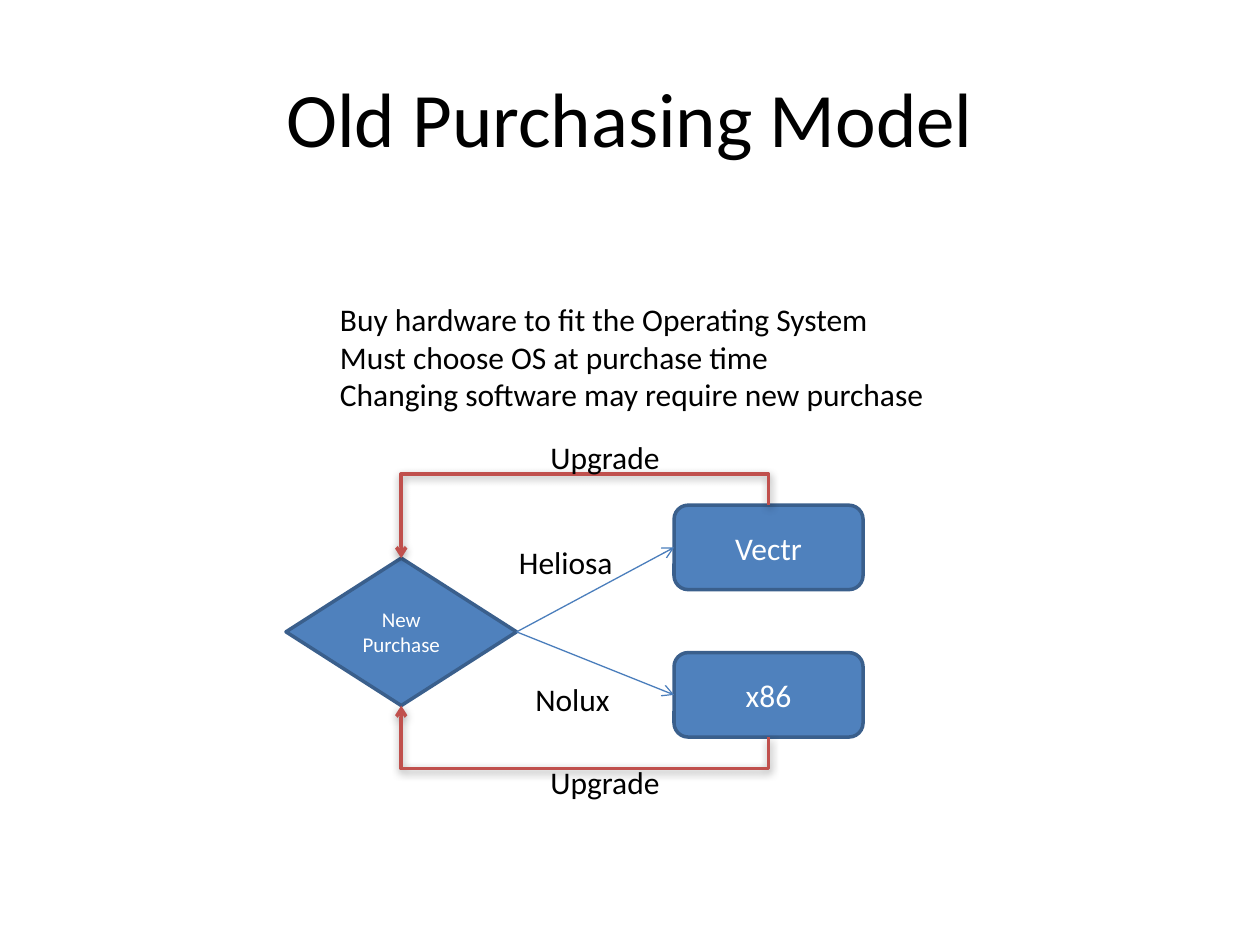
"""Builds the Old Purchasing Model slide with its decision and upgrade loops."""
from lxml import etree
from pptx import Presentation
from pptx.dml.color import RGBColor
from pptx.enum import shapes, text
from pptx.oxml.ns import qn
from pptx.util import Inches, Pt

COLORS = {"text": "000000", "light": "FFFFFF", "fill": "4F81BD",
          "border": "3A5F8C", "choice": "4B7EBC", "upgrade": "C0504D"}
FONT = "Calibri"
TITLE = ("Old Purchasing Model", 0.5, 0.3, 9, 1.25)
POINTS = ("Buy hardware to fit the Operating System\n"
          "Must choose OS at purchase time\n"
          "Changing software may require new purchase", 2.6, 2.33, 5.3, 1.3)
DECISION = ("New Purchase", 2.27, 4.43, 1.83, 1.17)
PLATFORMS = [("Vectr", 5.35, 4.01, 1.5, 0.67), ("x86", 5.35, 5.18, 1.5, 0.67)]
LABELS = [("Heliosa", 4.02, 4.26, 1.05, 0.4), ("Nolux", 4.15, 5.35, 0.9, 0.4),
          ("Upgrade", 4.27, 3.43, 1.16, 0.4), ("Upgrade", 4.27, 6.01, 1.16, 0.4)]
LOOP_GAP = 0.25
TOP, LEFT, BOTTOM, RIGHT = range(4)


def rgb(name):
    return RGBColor.from_string(COLORS[name])


def write(sp, words, size, color, align, anchor):
    tf = sp.text_frame
    tf.text = words
    tf.word_wrap = True
    tf.vertical_anchor = anchor
    for p in tf.paragraphs:
        p.alignment = align
        for r in p.runs:
            r.font.name, r.font.size = FONT, Pt(size)
            r.font.color.rgb = rgb(color)


def add_text(s, item, size=18, align=text.PP_ALIGN.LEFT, anchor=text.MSO_ANCHOR.TOP):
    words, *box = item
    sp = s.shapes.add_textbox(*map(Inches, box))
    write(sp, words, size, "text", align, anchor)
    return sp


def add_node(s, kind, item, size):
    words, *box = item
    sp = s.shapes.add_shape(kind, *map(Inches, box))
    sp.shadow.inherit = False
    sp.fill.solid()
    sp.fill.fore_color.rgb = rgb("fill")
    sp.line.color.rgb = rgb("border")
    sp.line.width = Pt(2)
    write(sp, words, size, "light", text.PP_ALIGN.CENTER, text.MSO_ANCHOR.MIDDLE)
    return sp


def add_arrow(s, kind, start, start_site, end, end_site, color, width):
    c = s.shapes.add_connector(kind, 0, 0, 0, 0)
    c.begin_connect(start, start_site)
    c.end_connect(end, end_site)
    c.line.color.rgb = rgb(color)
    c.line.width = Pt(width)
    etree.SubElement(c.line._get_or_add_ln(), qn("a:tailEnd"), type="arrow")
    effects = etree.SubElement(c._element.spPr, qn("a:effectLst"))
    return c, effects


def add_loop(s, start, end, site):
    c, effects = add_arrow(s, shapes.MSO_CONNECTOR.ELBOW, start, site, end, site, "upgrade", 2)
    span, rise = abs(c.end_x - c.begin_x), abs(c.end_y - c.begin_y)
    mid_x, mid_y = (c.begin_x + c.end_x) // 2, (c.begin_y + c.end_y) // 2
    c.left, c.top = mid_x - rise // 2, mid_y - span // 2
    c.width, c.height = rise, span
    xfrm = c._element.spPr.find(qn("a:xfrm"))
    xfrm.set("rot", str((270 if site == TOP else 90) * 60000))
    xfrm.set("flipH", "1")
    xfrm.set("flipV", "1" if site == TOP else "0")
    geom = c._element.spPr.find(qn("a:prstGeom"))
    guides = geom.find(qn("a:avLst"))
    if guides is None:
        guides = etree.SubElement(geom, qn("a:avLst"))
    bend = round(-Inches(LOOP_GAP) / rise * 100000)
    etree.SubElement(guides, qn("a:gd"), name="adj1", fmla=f"val {bend}")
    shadow = etree.SubElement(effects, qn("a:outerShdw"), blurRad=str(Pt(5)),
                              dist=str(Pt(1.6)), dir="5400000", rotWithShape="0")
    tint = etree.SubElement(shadow, qn("a:srgbClr"), val=COLORS["text"])
    etree.SubElement(tint, qn("a:alpha"), val="38000")


def main():
    prs = Presentation()
    prs.slide_width, prs.slide_height = Inches(10), Inches(7.5)
    s = prs.slides.add_slide(prs.slide_layouts[6])
    add_text(s, TITLE, 44, text.PP_ALIGN.CENTER, text.MSO_ANCHOR.MIDDLE)
    kinds = shapes.MSO_SHAPE
    decision = add_node(s, kinds.FLOWCHART_DECISION, DECISION, 12)
    platforms = [add_node(s, kinds.FLOWCHART_ALTERNATE_PROCESS, item, 18) for item in PLATFORMS]
    for platform in platforms:
        add_arrow(s, shapes.MSO_CONNECTOR.STRAIGHT, decision, RIGHT, platform, LEFT, "choice", 0.75)
    for platform, site in zip(platforms, (TOP, BOTTOM)):
        add_loop(s, platform, decision, site)
    for label in LABELS:
        tf = add_text(s, label).text_frame
        tf.word_wrap = False
        tf.auto_size = text.MSO_AUTO_SIZE.SHAPE_TO_FIT_TEXT
    add_text(s, POINTS)
    prs.save("out.pptx")


if __name__ == "__main__":
    main()
